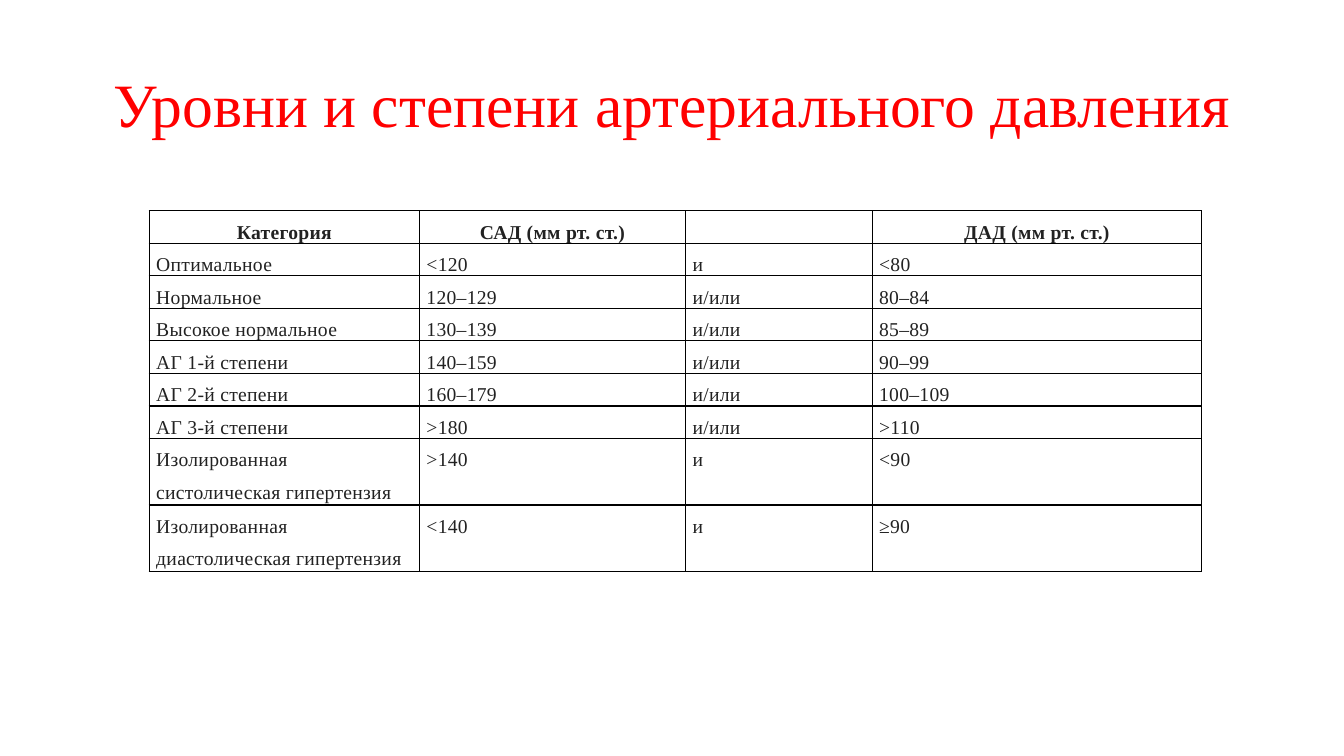
from lxml.etree import SubElement
from pptx import Presentation
from pptx.dml.color import RGBColor
from pptx.enum.text import MSO_ANCHOR as Anchor, PP_ALIGN as Align
from pptx.oxml.ns import qn
from pptx.util import Inches, Pt

COLORS = {"title": "FF0000", "text": "222222", "border": "000000", "paper": "FFFFFF"}


def write(frame, text, size, color, align, bold=False, line=1.0, after=0, tracking=0):
    paragraph = frame.paragraphs[0]
    paragraph.alignment = align
    paragraph.line_spacing = line
    paragraph.space_after = Pt(after)
    run = paragraph.add_run()
    run.text = text
    run.font.name = "Times New Roman"
    run.font.size = Pt(size)
    run.font.bold = bold
    run.font.color.rgb = RGBColor.from_string(COLORS[color])
    if tracking:
        run.font._element.set("spc", str(int(tracking * 100)))


def outline(cell):
    properties = cell._tc.get_or_add_tcPr()
    for side in ("a:lnL", "a:lnR", "a:lnT", "a:lnB"):
        edge = SubElement(properties, qn(side), w=str(Pt(1)))
        SubElement(SubElement(edge, qn("a:solidFill")), qn("a:srgbClr"), val=COLORS["border"])


prs = Presentation()
prs.slide_width = Inches(13.33)
prs.slide_height = Inches(7.5)
slide = prs.slides.add_slide(prs.slide_layouts[5])

title = slide.shapes.title
title.left, title.top = Inches(0.92), Inches(0.34)
title.width, title.height = Inches(11.5), Inches(1.45)
title.text_frame.vertical_anchor = Anchor.MIDDLE
write(title.text_frame, "Уровни и степени артериального давления", 44, "title",
      Align.CENTER, line=0.9)

pressure_levels = [
    ("Категория", "САД (мм рт. ст.)", "", "ДАД (мм рт. ст.)"),
    ("Оптимальное", "<120", "и", "<80"),
    ("Нормальное", "120–129", "и/или", "80–84"),
    ("Высокое нормальное", "130–139", "и/или", "85–89"),
    ("АГ 1-й степени", "140–159", "и/или", "90–99"),
    ("АГ 2-й степени", "160–179", "и/или", "100–109"),
    ("АГ 3-й степени", ">180", "и/или", ">110"),
    ("Изолированная систолическая гипертензия", ">140", "и", "<90"),
    ("Изолированная диастолическая гипертензия", "<140", "и", "≥90"),
]
column_widths = [2.68, 2.64, 1.85, 3.27]
row_heights = [0.31] * 7 + [0.66] * 2

levels = slide.shapes.add_table(
    len(row_heights), len(column_widths), Inches(1.48), Inches(2.09),
    Inches(sum(column_widths)), Inches(sum(row_heights))).table
levels.first_row = False
levels.horz_banding = False
for column, width in zip(levels.columns, column_widths):
    column.width = Inches(width)
for row, height in zip(levels.rows, row_heights):
    row.height = Inches(height)

for row_index, values in enumerate(pressure_levels):
    header = row_index == 0
    for column_index, value in enumerate(values):
        cell = levels.cell(row_index, column_index)
        cell.margin_left = cell.margin_right = Inches(0.07)
        cell.margin_top = cell.margin_bottom = 0
        cell.vertical_anchor = Anchor.MIDDLE if header else Anchor.TOP
        outline(cell)
        cell.fill.solid()
        cell.fill.fore_color.rgb = RGBColor.from_string(COLORS["paper"])
        if value:
            write(cell.text_frame, value, 14, "text",
                  Align.CENTER if header else Align.JUSTIFY,
                  bold=header, line=1.5, after=8, tracking=0.2)

prs.save("out.pptx")
